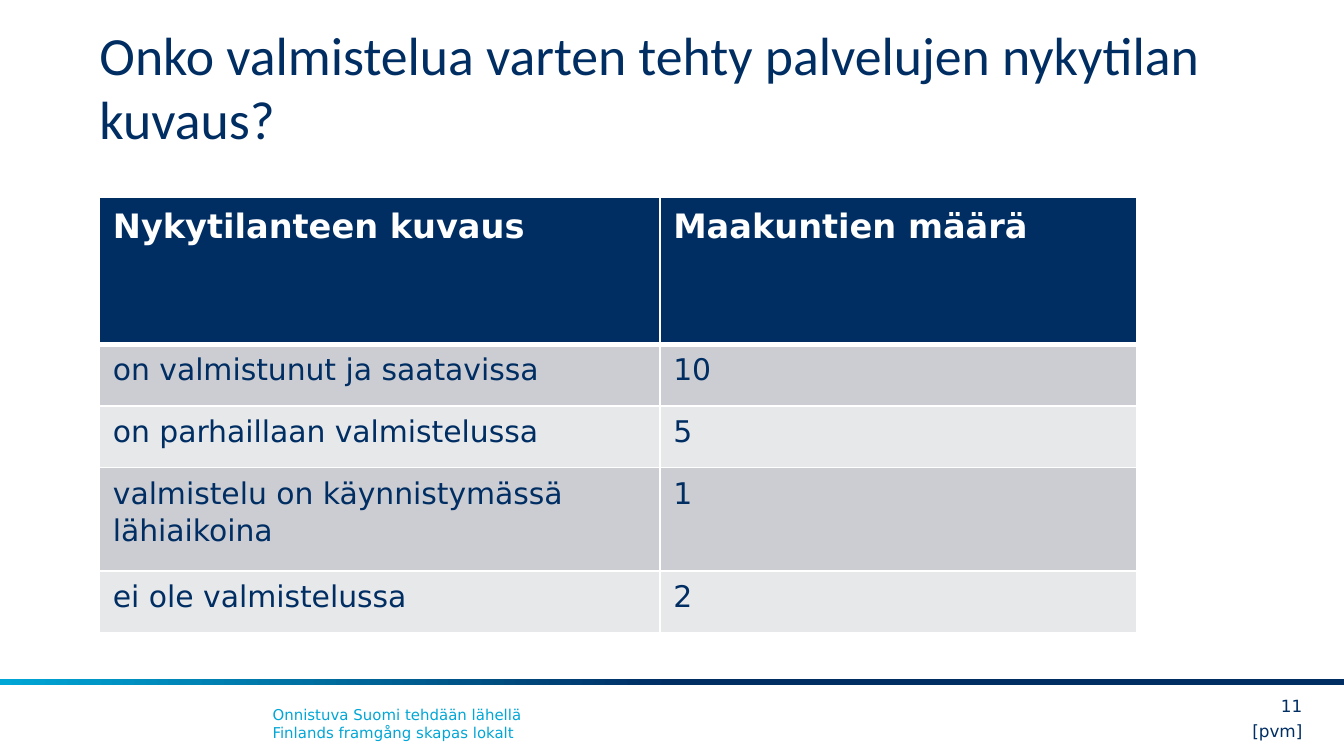
from lxml import etree
from pptx import Presentation
from pptx.dml.color import RGBColor
from pptx.enum.shapes import MSO_SHAPE
from pptx.enum.text import MSO_ANCHOR, PP_ALIGN
from pptx.oxml.ns import qn
from pptx.util import Inches, Pt

RECT = MSO_SHAPE.RECTANGLE
TOP, MIDDLE, BOTTOM = MSO_ANCHOR.TOP, MSO_ANCHOR.MIDDLE, MSO_ANCHOR.BOTTOM
LEFT, RIGHT = PP_ALIGN.LEFT, PP_ALIGN.RIGHT
NAVY, CYAN, WHITE = "002E63", "00A6D6", "FFFFFF"
BANDS = ["CCCDD3", "E7E8EA"]
SANS = "DejaVu Sans"

COLS = [4.17, 3.55]
ROWS = [
    (1.09, "Nykytilanteen kuvaus", "Maakuntien määrä"),
    (0.46, "on valmistunut ja saatavissa", "10"),
    (0.46, "on parhaillaan valmistelussa", "5"),
    (0.77, "valmistelu on käynnistymässä lähiaikoina", "1"),
    (0.46, "ei ole valmistelussa", "2"),
]


def rgb(code):
    return RGBColor.from_string(code)


def style(para, size, color, name=SANS, bold=False):
    font = para.font
    font.name, font.size, font.bold = name, Pt(size), bold
    font.color.rgb = rgb(color)


def add_text(slide, box, text, size, color, name=SANS, anchor=TOP,
             align=LEFT, pad=(0, 0)):
    """Add a text box; pad holds the side and the top/bottom insets."""
    frame = slide.shapes.add_textbox(*map(Inches, box)).text_frame
    frame.word_wrap = True
    frame.vertical_anchor = anchor
    frame.margin_left = frame.margin_right = Inches(pad[0])
    frame.margin_top = frame.margin_bottom = Inches(pad[1])
    para = frame.paragraphs[0]
    para.text = text
    para.alignment = align
    style(para, size, color, name)


def set_edges(cell, widths):
    """Draw white edges with widths in points, keyed L, R, T, B."""
    props = cell._tc.get_or_add_tcPr()
    for spot, side in enumerate("LRTB"):
        line = etree.Element(qn(f"a:ln{side}"), w=str(Pt(widths[side])))
        fill = etree.SubElement(line, qn("a:solidFill"))
        etree.SubElement(fill, qn("a:srgbClr"), val=WHITE)
        props.insert(spot, line)


def add_grid(slide, box):
    shape = slide.shapes.add_table(len(ROWS), len(COLS), *map(Inches, box))
    table = shape.table
    for col, width in zip(table.columns, COLS):
        col.width = Inches(width)
    for r, (height, *texts) in enumerate(ROWS):
        table.rows[r].height = Inches(height)
        head = r == 0
        for c, text in enumerate(texts):
            cell = table.cell(r, c)
            cell.fill.solid()
            cell.fill.fore_color.rgb = rgb(NAVY if head else BANDS[(r - 1) % 2])
            set_edges(cell, {"L": 1, "R": 1, "T": 3 if r == 1 else 1,
                             "B": 3 if head else 1})
            para = cell.text_frame.paragraphs[0]
            para.text = text
            para.line_spacing = 1.07
            para.space_after = Pt(8)
            style(para, 18 if head else 16, WHITE if head else NAVY, bold=head)


def add_footer(slide, box):
    left, top, width, height = box
    bar = slide.shapes.add_shape(RECT, *map(Inches, (left, top, width, 0.05)))
    bar.shadow.inherit = False
    bar.line.fill.background()
    bar.fill.gradient()
    bar.fill.gradient_angle = 180
    stops = bar.fill.gradient_stops
    for stop, place, color in zip(stops, (0.5, 1), (NAVY, CYAN)):
        stop.position = place
        stop.color.rgb = rgb(color)
    add_text(slide, (left + 1.93, top + 0.15, 6.54, 0.37),
             "Onnistuva Suomi tehdään lähellä\vFinlands framgång skapas lokalt",
             8, CYAN, pad=(0.1, 0.05))
    edge = left + width - 0.31
    for text, wide, drop in (("[pvm]", 0.99, 0.28), ("11", 0.43, 0.09)):
        add_text(slide, (edge - wide, top + drop, wide, 0.22), text, 9, NAVY,
                 anchor=MIDDLE, align=RIGHT)


def main():
    deck = Presentation()
    deck.slide_width = Inches(10)
    deck.slide_height = deck.slide_width * 9 // 16
    slide = deck.slides.add_slide(deck.slide_layouts[6])
    add_footer(slide, (0, 5.05, 10, 0.57))
    add_text(slide, (0.74, 0.23, 8.51, 0.94),
             "Onko valmistelua varten tehty palvelujen nykytilan kuvaus?",
             28.8, NAVY, "Calibri", BOTTOM, pad=(0, 0.05))
    add_grid(slide, (0.74, 1.47, sum(COLS), sum(row[0] for row in ROWS)))
    deck.save("out.pptx")


if __name__ == "__main__":
    main()
